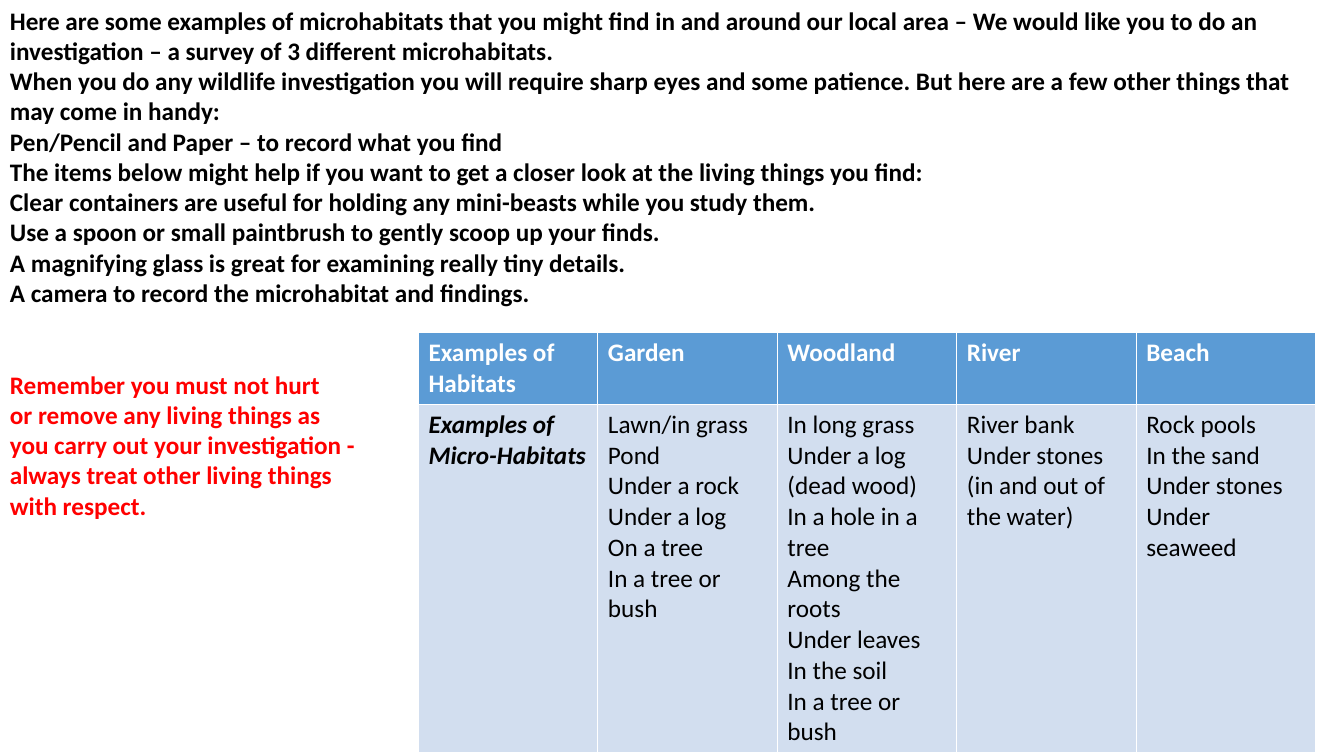
from pptx import Presentation
from pptx.dml.color import RGBColor
from pptx.util import Inches, Pt

# Content: "\v" marks a line break inside a paragraph
INTRO = [
    "Here are some examples of microhabitats that you might find in and around our local area – "
    "We would like you to do an investigation – a survey of 3 different microhabitats.",
    "When you do any wildlife investigation you will require sharp eyes and some patience. "
    "But here are a few other things that may come in handy:",
    "Pen/Pencil and Paper – to record what you find",
    "The items below might help if you want to get a closer look at the living things you find:\v"
    "Clear containers are useful for holding any mini-beasts while you study them.\v"
    "Use a spoon or small paintbrush to gently scoop up your finds.\v"
    "A magnifying glass is great for examining really tiny details.",
    "A camera to record the microhabitat and findings.",
]
REMINDER = [
    "Remember you must not hurt",
    "or remove any living things as",
    "you carry out your investigation -",
    "always treat other living things",
    "with respect.",
]
HABITATS = {
    "Examples of Habitats": ["Examples of Micro-Habitats"],
    "Garden": ["Lawn/in grass", "Pond", "Under a rock", "Under a log", "On a tree",
               "In a tree or bush"],
    "Woodland": ["In long grass", "Under a log (dead wood)", "In a hole in a tree",
                 "Among the roots", "Under leaves", "In the soil", "In a tree or bush"],
    "River": ["River bank", "Under stones", "(in and out of the water)"],
    "Beach": ["Rock pools", "In the sand", "Under stones", "Under seaweed"],
}
BLACK, WHITE, RED = "000000", "FFFFFF", "FF0000"
HEADER_FILL, BODY_FILL = "5B9BD5", "D2DEEF"
COLUMN_WIDTH = 1.78
ROW_HEIGHTS = [0.7, 3.4]


def rgb(value):
    return RGBColor.from_string(value)


def write(tf, lines, color, bold=False, italic=False, append=False):
    """Write one paragraph per line and return the first one."""
    added = []
    for i, line in enumerate(lines):
        p = tf.add_paragraph() if append or i else tf.paragraphs[0]
        p.text = line
        font = p.font
        font.name, font.size = "Calibri", Pt(18)
        font.bold, font.italic = bold, italic
        font.color.rgb = rgb(color)
        added.append(p)
    return added[0]


def fill_cell(cell, lines, fill, color, bold=False, italic=False):
    cell.fill.solid()
    cell.fill.fore_color.rgb = rgb(fill)
    write(cell.text_frame, lines, color, bold, italic)


prs = Presentation()
prs.slide_width, prs.slide_height = Inches(13.33), Inches(7.5)
s = prs.slides.add_slide(prs.slide_layouts[6])

# Habitat table
table = s.shapes.add_table(
    len(ROW_HEIGHTS), len(HABITATS), Inches(4.15), Inches(3.3),
    Inches(COLUMN_WIDTH * len(HABITATS)), Inches(sum(ROW_HEIGHTS))).table
for row, height in zip(table.rows, ROW_HEIGHTS):
    row.height = Inches(height)
for col, (habitat, places) in enumerate(HABITATS.items()):
    table.columns[col].width = Inches(COLUMN_WIDTH)
    is_label = col == 0
    fill_cell(table.cell(0, col), [habitat], HEADER_FILL, WHITE, bold=True)
    fill_cell(table.cell(1, col), places, BODY_FILL, BLACK, bold=is_label, italic=is_label)

# Instructions, then the red reminder two lines further down
tf = s.shapes.add_textbox(0, 0, prs.slide_width, prs.slide_height).text_frame
tf.word_wrap = True
write(tf, INTRO, BLACK, bold=True)
first = write(tf, REMINDER, RED, bold=True, append=True)
first.space_before = Pt(44)

prs.save("out.pptx")
